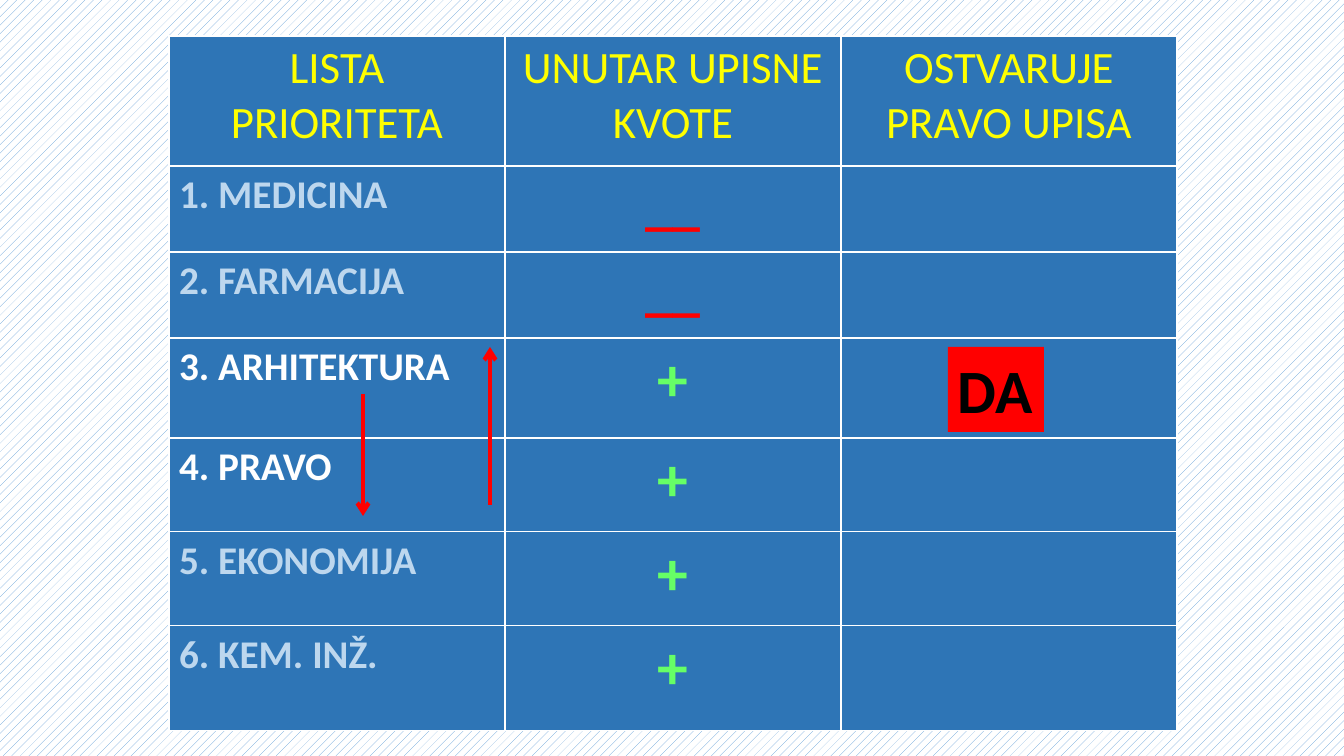
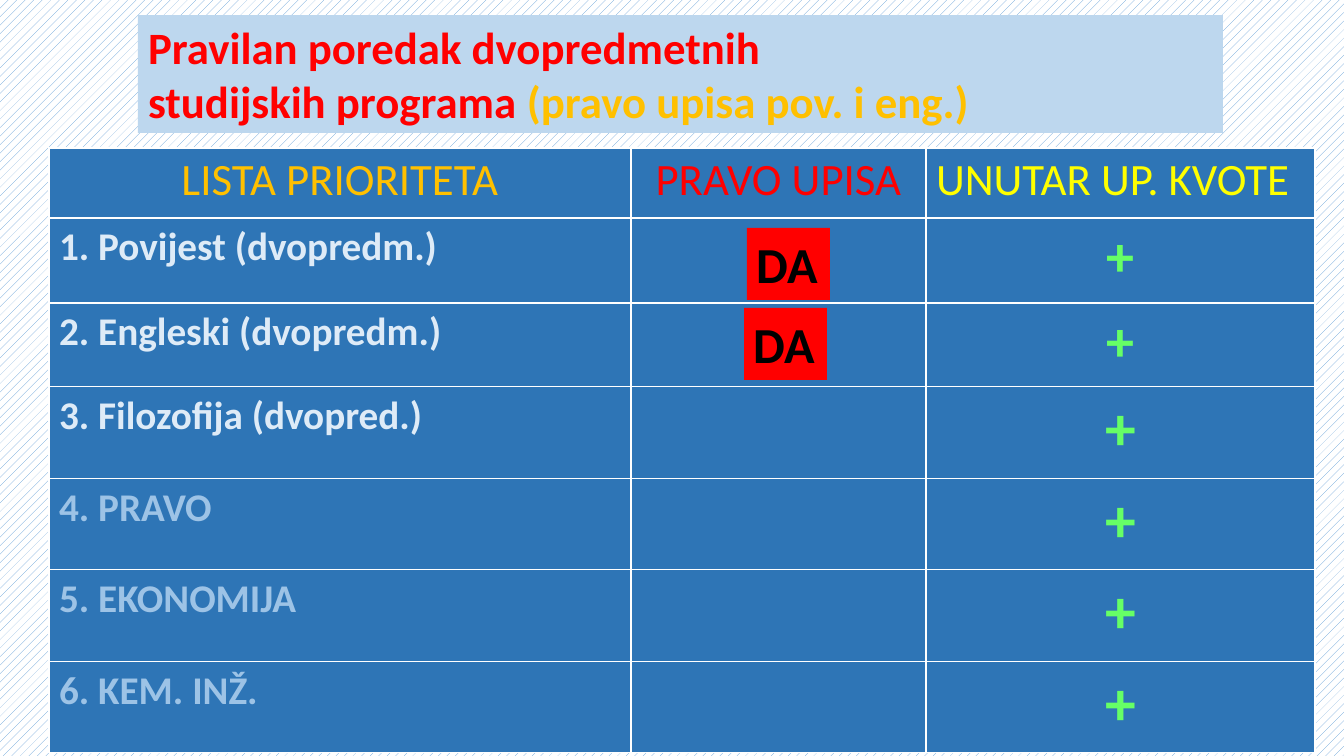
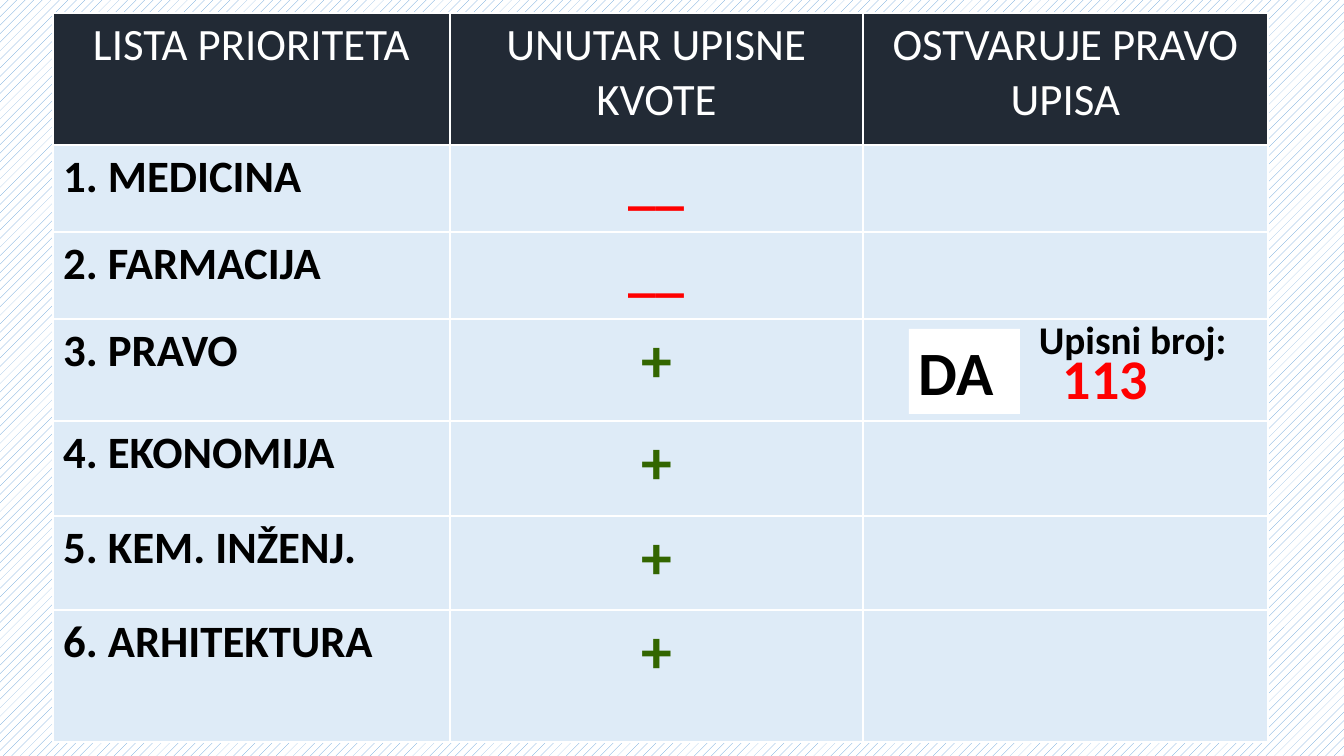
from lxml.etree import SubElement
from pptx import Presentation
from pptx.dml.color import RGBColor
from pptx.enum.dml import MSO_PATTERN
from pptx.enum.shapes import MSO_CONNECTOR, MSO_SHAPE
from pptx.enum.text import MSO_ANCHOR, MSO_AUTO_SIZE, PP_ALIGN
from pptx.oxml.ns import qn
from pptx.util import Emu, Pt

COLORS = {
    "white": "FFFFFF", "black": "000000", "red": "FF0000", "yellow": "FFFF00",
    "amber": "FFC000", "green": "66FF66", "dark_green": "336600",
    "blue": "2E75B6", "sky": "5B9BD5", "soft_blue": "9DC3E6",
    "pale_blue": "BDD7EE", "ice": "DEEBF7", "navy": "222A35",
}
RGB = {name: RGBColor.from_string(value) for name, value in COLORS.items()}
FONT = "Calibri"
LEFT, CENTER = PP_ALIGN.LEFT, PP_ALIGN.CENTER


def px(n):
    return Emu(round(n * 12192000 / 1344))


def style(p, size, color, bold=True, align=LEFT):
    p.alignment = align
    for r in p.runs:
        r.font.name = FONT
        r.font.size = Pt(size)
        r.font.bold = bold
        r.font.color.rgb = RGB[color]


# Table rows: (text, size, colour, alignment) per cell, None for an empty cell
MINUS = ("__", 40, "red", CENTER)
PLUS = ("+", 44, "green", CENTER)
SMALL_PLUS = ("+", 40, "green", CENTER)
DARK_PLUS = ("+", 44, "dark_green", CENTER)

# Labels: (text, box, size, colour, fill, wrap)
SLIDES = [
    {
        "at": (169, 36), "cols": [336, 336, 336],
        "rows": [130, 86, 86, 100, 94, 94, 105],
        "head_fill": "blue", "body_fill": "blue",
        "head": [("LISTA PRIORITETA", 32, "yellow", CENTER),
                 ("UNUTAR UPISNE KVOTE", 32, "yellow", CENTER),
                 ("OSTVARUJE PRAVO UPISA", 32, "yellow", CENTER)],
        "body": [[("1. MEDICINA", 28, "pale_blue", LEFT), MINUS, None],
                 [("2. FARMACIJA", 28, "pale_blue", LEFT), MINUS, None],
                 [("3. ARHITEKTURA", 28, "white", LEFT), PLUS, None],
                 [("4. PRAVO", 28, "white", LEFT), PLUS, None],
                 [("5. EKONOMIJA", 28, "pale_blue", LEFT), PLUS, None],
                 [("6. KEM. INŽ.", 28, "pale_blue", LEFT), PLUS, None]],
        "labels": [("DA", (948, 347, 96, 85), 44, "black", "red", False)],
        "arrows": [(490, 505, 490, 347), (363, 394, 363, 516)],
    },
    {
        "heading": [[("Pravilan poredak dvopredmetnih", "red")],
                    [("studijskih programa ", "red"),
                     ("(pravo upisa pov. i eng.)", "amber")]],
        "at": (49, 148), "cols": [582, 295, 389],
        "rows": [70, 85, 84, 92, 91, 92, 91],
        "head_fill": "blue", "body_fill": "blue",
        "head": [("LISTA PRIORITETA", 32, "amber", CENTER),
                 ("PRAVO UPISA", 32, "red", CENTER),
                 ("UNUTAR UP. KVOTE", 32, "yellow", LEFT)],
        "body": [[("1. Povijest (dvopredm.)", 28, "ice", LEFT), None, SMALL_PLUS],
                 [("2. Engleski (dvopredm.)", 28, "ice", LEFT), None, SMALL_PLUS],
                 [("3. Filozofija (dvopred.)", 28, "ice", LEFT), None, PLUS],
                 [("4. PRAVO", 28, "soft_blue", LEFT), None, PLUS],
                 [("5. EKONOMIJA", 28, "soft_blue", LEFT), None, PLUS],
                 [("6. KEM. INŽ.", 28, "soft_blue", LEFT), None, PLUS]],
        "labels": [("DA", (747, 228, 83, 72), 36, "black", "red", False),
                   ("DA", (744, 308, 83, 72), 36, "black", "red", False)],
    },
    {
        "at": (53, 13), "cols": [397, 413, 405],
        "rows": [132, 87, 87, 102, 95, 94, 132],
        "head_fill": "navy", "body_fill": "ice",
        "head": [("LISTA PRIORITETA", 32, "white", CENTER),
                 ("UNUTAR UPISNE KVOTE", 32, "white", CENTER),
                 ("OSTVARUJE PRAVO UPISA", 32, "white", CENTER)],
        "body": [[("1. MEDICINA", 32, "black", LEFT), MINUS, None],
                 [("2. FARMACIJA", 32, "black", LEFT), MINUS, None],
                 [("3. PRAVO", 32, "black", LEFT), DARK_PLUS, None],
                 [("4. EKONOMIJA", 32, "black", LEFT), DARK_PLUS, None],
                 [("5. KEM. INŽENJ.", 32, "black", LEFT), DARK_PLUS, None],
                 [("6. ARHITEKTURA", 32, "black", LEFT), DARK_PLUS, None]],
        "labels": [("DA", (909, 329, 111, 85), 44, "black", "white", True),
                   ("113", (1053, 339, 106, 78), 40, "red", None, False),
                   ("Upisni broj:", (1029, 310, 210, 57), 28, "black", None, False)],
    },
]

prs = Presentation()
prs.slide_width, prs.slide_height = px(1344), px(756)
title_only, blank = prs.slide_layouts[5], prs.slide_layouts[6]

# Shared patterned background
fill = prs.slide_master.background.fill
fill.patterned()
fill.pattern = MSO_PATTERN.PERCENT_20
fill.fore_color.rgb = RGB["sky"]
fill.back_color.rgb = RGB["white"]

for data in SLIDES:
    heading = data.get("heading")
    s = prs.slides.add_slide(title_only if heading else blank)

    # Heading band
    if heading:
        sp = s.shapes.title
        sp.left, sp.top, sp.width, sp.height = px(138), px(15), px(1085), px(118)
        sp.fill.solid()
        sp.fill.fore_color.rgb = RGB["pale_blue"]
        tf = sp.text_frame
        tf.auto_size = MSO_AUTO_SIZE.NONE
        tf.vertical_anchor = MSO_ANCHOR.TOP
        for i, parts in enumerate(heading):
            p = tf.add_paragraph() if i else tf.paragraphs[0]
            for text, color in parts:
                p.add_run().text = text
            style(p, 32, "red")
            for r, (text, color) in zip(p.runs, parts):
                r.font.color.rgb = RGB[color]

    # Priority table
    cols, rows = data["cols"], data["rows"]
    x, y = data["at"]
    table = s.shapes.add_table(len(rows), len(cols), px(x), px(y),
                               px(sum(cols)), px(sum(rows))).table
    table.first_row = table.horz_banding = False
    for column, width in zip(table.columns, cols):
        column.width = px(width)
    for row, height in zip(table.rows, rows):
        row.height = px(height)
    for i, line in enumerate([data["head"]] + data["body"]):
        for j, content in enumerate(line):
            cell = table.cell(i, j)
            tcPr = cell._tc.get_or_add_tcPr()
            for side in ("lnL", "lnR", "lnT", "lnB"):
                ln = SubElement(tcPr, qn("a:" + side), w=str(Pt(1)))
                solid = SubElement(ln, qn("a:solidFill"))
                SubElement(solid, qn("a:srgbClr"), val=COLORS["white"])
            cell.fill.solid()
            cell.fill.fore_color.rgb = RGB[data["body_fill" if i else "head_fill"]]
            if content:
                text, size, color, align = content
                cell.text_frame.text = text
                style(cell.text_frame.paragraphs[0], size, color, i > 0, align)

    # Labels over the table
    for text, box, size, color, label_fill, wrap in data["labels"]:
        box = [px(n) for n in box]
        if label_fill:
            sp = s.shapes.add_shape(MSO_SHAPE.RECTANGLE, *box)
            sp.shadow.inherit = False
            sp.fill.solid()
            sp.fill.fore_color.rgb = RGB[label_fill]
            sp.line.fill.background()
        else:
            sp = s.shapes.add_textbox(*box)
        tf = sp.text_frame
        tf.text = text
        tf.word_wrap = wrap
        tf.auto_size = MSO_AUTO_SIZE.SHAPE_TO_FIT_TEXT
        tf.vertical_anchor = MSO_ANCHOR.TOP
        style(tf.paragraphs[0], size, color)

    # Arrows between choices
    for ends in data.get("arrows", []):
        arrow = s.shapes.add_connector(MSO_CONNECTOR.STRAIGHT, *[px(n) for n in ends])
        arrow.line.color.rgb = RGB["red"]
        arrow.line.width = Pt(3)
        SubElement(arrow.line._get_or_add_ln(), qn("a:tailEnd"), type="arrow")
        SubElement(arrow._element.spPr, qn("a:effectLst"))

prs.save("out.pptx")
